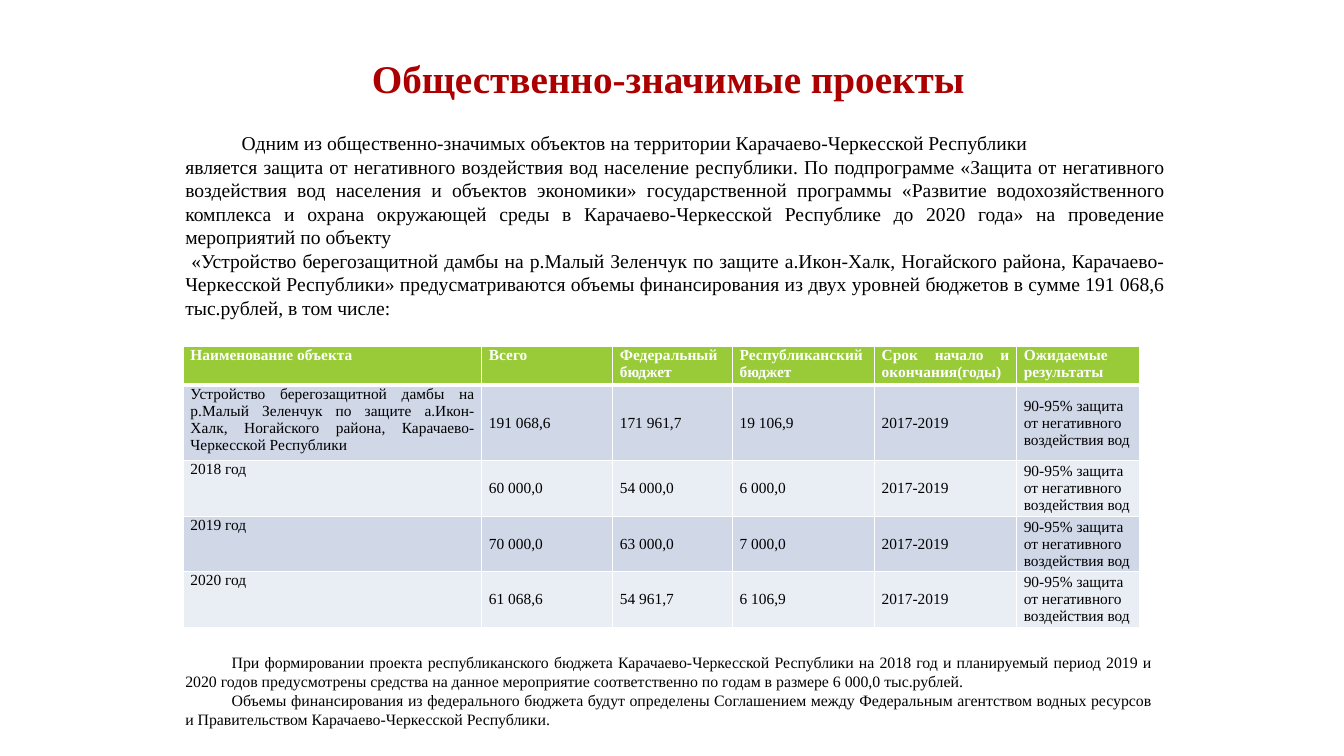
from lxml import etree
from pptx import Presentation, util as u
from pptx.dml.color import RGBColor
from pptx.enum import text
from pptx.oxml import ns

FONT = "Times New Roman"
COLOURS = {"title": "AC0000", "text": "000000", "white": "FFFFFF",
           "header": "99CB38", "odd": "D0D8E8", "even": "E9EDF4"}
JUSTIFY, LEFT, CENTER = (text.PP_ALIGN.JUSTIFY, text.PP_ALIGN.LEFT,
                         text.PP_ALIGN.CENTER)

INTRO = [
    "Одним из общественно-значимых объектов на территории "
    "Карачаево-Черкесской Республики",
    "является защита от негативного воздействия вод население республики. "
    "По подпрограмме «Защита от негативного воздействия вод населения и "
    "объектов экономики» государственной программы «Развитие "
    "водохозяйственного комплекса и охрана окружающей среды в "
    "Карачаево-Черкесской Республике до 2020 года» на проведение "
    "мероприятий по объекту",
    " «Устройство берегозащитной дамбы на р.Малый Зеленчук по защите "
    "а.Икон-Халк, Ногайского района, Карачаево-Черкесской Республики» "
    "предусматриваются объемы финансирования из двух уровней бюджетов "
    "в сумме 191 068,6 тыс.рублей, в том числе:",
]
HEADER = ["Наименование объекта", "Всего", "Федеральный бюджет",
          "Республиканский бюджет", "Срок начало и окончания(годы)",
          "Ожидаемые результаты"]
FUNDING = [
    ["Устройство берегозащитной дамбы на р.Малый Зеленчук по защите "
     "а.Икон-Халк, Ногайского района, Карачаево-Черкесской Республики",
     "191 068,6", "171 961,7", "19 106,9"],
    ["2018 год", "60 000,0", "54 000,0", "6 000,0"],
    ["2019 год", "70 000,0", "63 000,0", "7 000,0"],
    ["2020 год", "61 068,6", "54 961,7", "6 106,9"],
]
SHARED = ["2017-2019", "90-95% защита от негативного воздействия вод"]
NOTES = [
    "При формировании проекта республиканского бюджета "
    "Карачаево-Черкесской Республики на 2018 год и планируемый период 2019 "
    "и 2020 годов предусмотрены средства на данное мероприятие "
    "соответственно по годам в размере 6 000,0 тыс.рублей.",
    "Объемы финансирования из федерального бюджета будут определены "
    "Соглашением между Федеральным агентством водных ресурсов и "
    "Правительством Карачаево-Черкесской Республики.",
]
COLUMN_WIDTHS = [7.52, 3.3, 3.02, 3.58, 3.58, 3.1]
ROW_HEIGHTS = [0.97, 1.9, 1.4, 1.4, 1.4]


def write(para, words, size, colour="text", bold=False, align=JUSTIFY):
    para.alignment = align
    span = para.add_run()
    span.text = words
    span.font.name = FONT
    span.font.size = u.Pt(size)
    span.font.bold = bold
    span.font.color.rgb = RGBColor.from_string(COLOURS[colour])


def add_title(page, left, top, width, height):
    box = page.shapes.title
    box.left, box.top = u.Cm(left), u.Cm(top)
    box.width, box.height = u.Cm(width), u.Cm(height)
    frame = box.text_frame
    frame.auto_size = text.MSO_AUTO_SIZE.NONE
    frame.vertical_anchor = text.MSO_ANCHOR.MIDDLE
    write(frame.paragraphs[0], "Общественно-значимые проекты", 28,
          "title", True, CENTER)


def add_prose(page, left, top, width, height, paragraphs, size, indents):
    box = page.shapes.add_textbox(u.Cm(left), u.Cm(top),
                                  u.Cm(width), u.Cm(height))
    frame = box.text_frame
    frame.word_wrap = True
    for i, (words, indent) in enumerate(zip(paragraphs, indents)):
        para = frame.add_paragraph() if i else frame.paragraphs[0]
        # First-line indent
        properties = para._p.get_or_add_pPr()
        properties.set("marL", "0")
        properties.set("indent", str(u.Cm(indent)))
        write(para, words, size)


def add_borders(cell, top, bottom):
    properties = cell._tc.get_or_add_tcPr()
    sides = [("L", 1), ("R", 1), ("T", top), ("B", bottom)]
    for place, (side, points) in enumerate(sides):
        line = etree.Element(ns.qn(f"a:ln{side}"), w=str(u.Pt(points)))
        fill = etree.SubElement(line, ns.qn("a:solidFill"))
        etree.SubElement(fill, ns.qn("a:srgbClr"), val=COLOURS["white"])
        properties.insert(place, line)


def add_funding_table(page, left, top):
    rows = [HEADER] + [row + SHARED for row in FUNDING]
    table = page.shapes.add_table(
        len(rows), len(HEADER), u.Cm(left), u.Cm(top),
        u.Cm(sum(COLUMN_WIDTHS)), u.Cm(sum(ROW_HEIGHTS))).table
    for column, width in zip(table.columns, COLUMN_WIDTHS):
        column.width = u.Cm(width)
    for r, (row, height) in enumerate(zip(rows, ROW_HEIGHTS)):
        table.rows[r].height = u.Cm(height)
        band = "header" if r == 0 else "odd" if r % 2 else "even"
        for c, words in enumerate(row):
            cell = table.cell(r, c)
            cell.margin_left = cell.margin_right = u.Cm(0.18)
            cell.margin_top = cell.margin_bottom = 0
            cell.fill.solid()
            cell.fill.fore_color.rgb = RGBColor.from_string(COLOURS[band])
            # Thick rule between the header and the first row
            add_borders(cell, 3 if r == 1 else 1, 3 if r == 0 else 1)
            is_value = r > 0 and c > 0
            if is_value:
                cell.vertical_anchor = text.MSO_ANCHOR.MIDDLE
            write(cell.text_frame.paragraphs[0], words, 11,
                  "text" if r else "white", r == 0,
                  LEFT if is_value else JUSTIFY)


def main():
    deck = Presentation()
    deck.slide_width, deck.slide_height = u.Cm(33.87), u.Cm(19.05)
    page = deck.slides.add_slide(deck.slide_layouts.get_by_name("Title Only"))
    add_title(page, 8, 1.24, 17.68, 1.45)
    add_prose(page, 4.42, 3.18, 25.2, 5.05, INTRO, 14, [1.42, 0, 0])
    add_funding_table(page, 4.62, 8.74)
    add_prose(page, 4.42, 16.33, 24.84, 2.18, NOTES, 11.3, [1.17, 1.17])
    deck.save("out.pptx")


if __name__ == "__main__":
    main()
